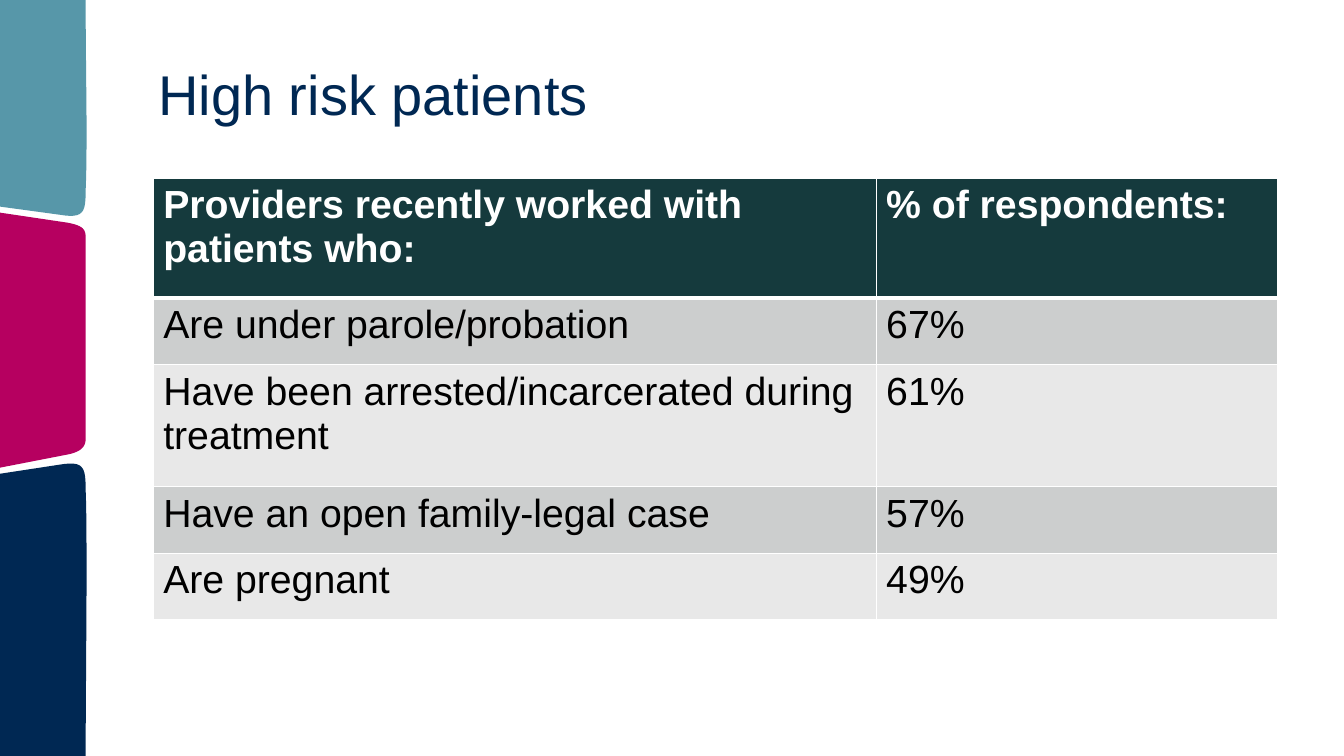
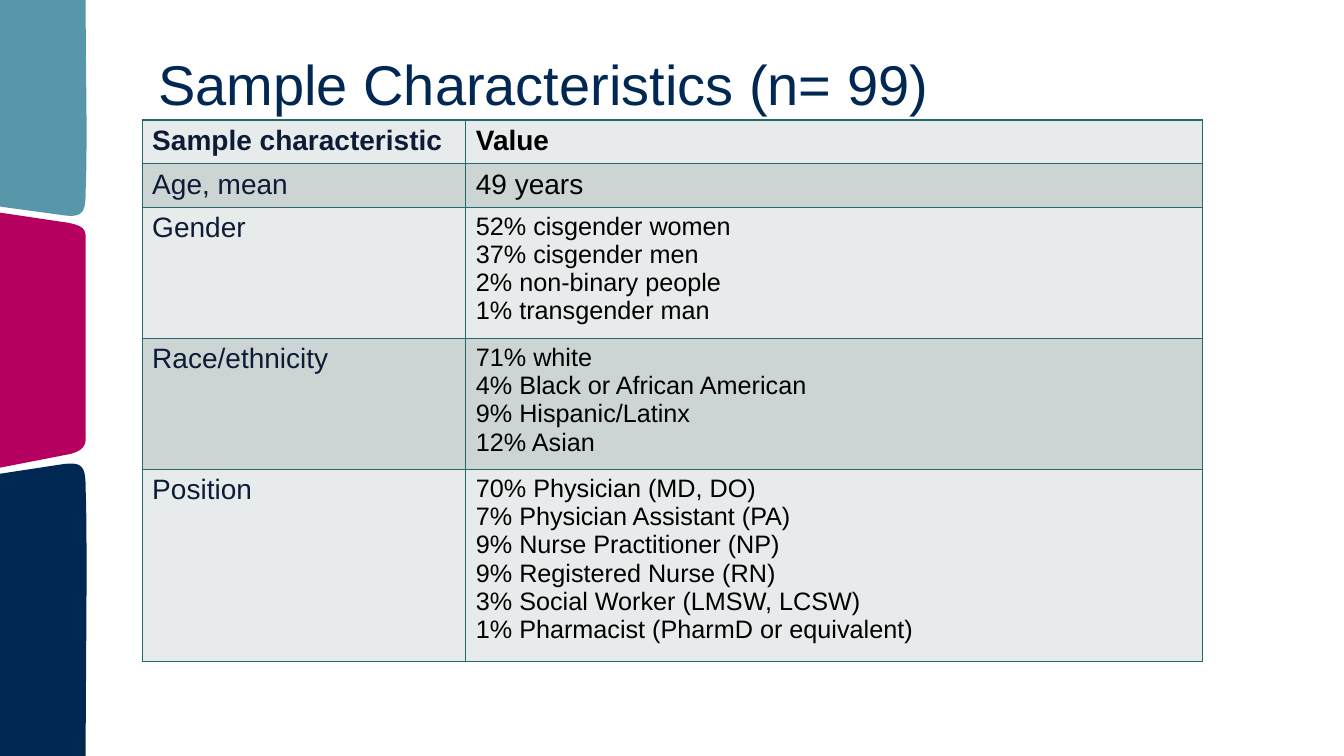
from lxml import etree
from pptx import Presentation
from pptx.dml.color import RGBColor
from pptx.enum import text
from pptx.oxml.ns import qn
from pptx.util import Inches, Pt

# Shared look
FONT, NAVY, TEAL, MAGENTA = "Arial", "002853", "5797A9", "B60060"
WHITE, BLACK, INK = "FFFFFF", "000000", "0C1C36"

# Side band: colour, start point, then line ends (2 numbers) or curves (6)
SIDE_BAND = [
    (MAGENTA, (0, 2.11), [
        (0.67, 2.21), (0.83, 2.24, 0.85, 2.28, 0.85, 2.36), (0.85, 4.35),
        (0.85, 4.42, 0.82, 4.48, 0.67, 4.51), (0, 4.64)]),
    (TEAL, (0, 2.05), [
        (0.59, 2.13), (0.83, 2.17, 0.85, 2.11, 0.85, 1.89),
        (0.87, 1.4, 0.85, 0.73, 0.85, 0), (0, 0)]),
    (NAVY, (0, 4.7), [
        (0.59, 4.61), (0.83, 4.57, 0.85, 4.63, 0.85, 4.86),
        (0.87, 5.34, 0.85, 6.78, 0.85, 7.5), (0, 7.5)]),
]

# Slide content: each cell is a string, or a list with one item a line
RISK = {
    "title": "High risk patients", "title_top": 0.3,
    "at": (1.52, 1.77), "cols": (7.17, 3.98),
    "heights": (1.19, 0.66, 1.21, 0.66, 0.66),
    "rows": [
        ("Providers recently worked with patients who:", "% of respondents:"),
        ("Are under parole/probation", "67%"),
        ("Have been arrested/incarcerated during treatment", "61%"),
        ("Have an open family-legal case", "57%"),
        ("Are pregnant", "49%"),
    ],
    "head_fill": "153A3D", "fills": ("E8E8E8", "CCCECE"),
    "head_colors": (WHITE, WHITE), "colors": (BLACK, BLACK),
    "size": 28, "list_size": 28, "border": WHITE, "head_rule": 3,
}
SAMPLE = {
    "title": "Sample Characteristics (n= 99)", "title_top": 0.2,
    "at": (1.41, 1.19), "cols": (3.21, 7.31),
    "heights": (0.41, 0.41, 1.22, 1.22, 1.78),
    "rows": [
        ("Sample characteristic", "Value"),
        ("Age, mean", "49 years"),
        ("Gender", ["52% cisgender women", "37% cisgender men",
                    "2% non-binary people", "1% transgender man"]),
        ("Race/ethnicity", ["71% white", "4% Black or African American",
                            "9% Hispanic/Latinx", "12% Asian"]),
        ("Position", ["70% Physician (MD, DO)", "7% Physician Assistant (PA)",
                      "9% Nurse Practitioner (NP)", "9% Registered Nurse (RN)",
                      "3% Social Worker (LMSW, LCSW)",
                      "1% Pharmacist (PharmD or equivalent)"]),
    ],
    "head_fill": "E8EBEB", "fills": ("E8EBEB", "CDD4D4"),
    "head_colors": (INK, BLACK), "colors": (INK, BLACK),
    "size": 20, "list_size": 18, "border": "26686D", "head_rule": 1,
}


def rgb(value):
    return RGBColor.from_string(value)


def style(p, size, color, bold=False):
    p.font.name, p.font.size, p.font.bold = FONT, Pt(size), bold
    p.font.color.rgb = rgb(color)


def outline(start, steps, parts=12):
    """Turn lines and cubic curves into points."""
    points = [start]
    for step in steps:
        if len(step) == 2:
            points.append(step)
            continue
        controls = [points[-1], step[:2], step[2:4], step[4:]]
        for i in range(1, parts + 1):
            t = i / parts
            weights = ((1 - t) ** 3, 3 * t * (1 - t) ** 2,
                       3 * t * t * (1 - t), t ** 3)
            points.append(tuple(sum(w * c[axis] for w, c in zip(weights, controls))
                                for axis in (0, 1)))
    return points


def add_side_band(s):
    for color, start, steps in SIDE_BAND:
        points = [(Inches(x), Inches(y)) for x, y in outline(start, steps)]
        builder = s.shapes.build_freeform(*points[0])
        builder.add_line_segments(points[1:], close=True)
        sp = builder.convert_to_shape()
        sp.shadow.inherit = False
        sp.fill.solid()
        sp.fill.fore_color.rgb = rgb(color)
        sp.line.fill.background()


def add_title(s, title, top):
    box = s.shapes.add_textbox(Inches(1.52), Inches(top), Inches(11.15), Inches(1.25))
    tf = box.text_frame
    tf.word_wrap = True
    tf.vertical_anchor = text.MSO_ANCHOR.MIDDLE
    tf.margin_left = tf.margin_right = Inches(0.05)
    p = tf.paragraphs[0]
    p.text = title
    style(p, 40, NAVY)


def set_borders(cell, color, widths):
    """Widths run left, right, top, bottom."""
    tc_pr = cell._tc.get_or_add_tcPr()
    for i, (side, width) in enumerate(zip("LRTB", widths)):
        line = etree.Element(qn(f"a:ln{side}"), w=str(Pt(width)))
        fill = etree.SubElement(line, qn("a:solidFill"))
        etree.SubElement(fill, qn("a:srgbClr"), val=color)
        tc_pr.insert(i, line)


def fill_cell(cell, content, size, color, bold, fill):
    lines = content if isinstance(content, list) else [content]
    tf = cell.text_frame
    for i, line in enumerate(lines):
        p = tf.paragraphs[0] if i == 0 else tf.add_paragraph()
        p.text = line
        style(p, size, color, bold)
    cell.fill.solid()
    cell.fill.fore_color.rgb = rgb(fill)


def add_data_table(s, d):
    rows, cols, heights = d["rows"], d["cols"], d["heights"]
    left, top = d["at"]
    table = s.shapes.add_table(len(rows), len(cols), Inches(left), Inches(top),
                               Inches(sum(cols)), Inches(sum(heights))).table
    table.first_row = table.horz_banding = False
    for column, width in zip(table.columns, cols):
        column.width = Inches(width)
    for r, row in enumerate(rows):
        table.rows[r].height = Inches(heights[r])
        head = r == 0
        fill = d["head_fill"] if head else d["fills"][r % 2]
        colors = d["head_colors"] if head else d["colors"]
        above = d["head_rule"] if r == 1 else 1
        below = d["head_rule"] if head else 1
        for c, content in enumerate(row):
            size = d["list_size"] if isinstance(content, list) else d["size"]
            cell = table.cell(r, c)
            fill_cell(cell, content, size, colors[c], head, fill)
            set_borders(cell, d["border"], (1, 1, above, below))


def main():
    prs = Presentation()
    prs.slide_width, prs.slide_height = Inches(13.33), Inches(7.5)
    for d in (RISK, SAMPLE):
        s = prs.slides.add_slide(prs.slide_layouts[6])
        add_side_band(s)
        add_data_table(s, d)
        add_title(s, d["title"], d["title_top"])
    prs.save("out.pptx")


if __name__ == "__main__":
    main()
